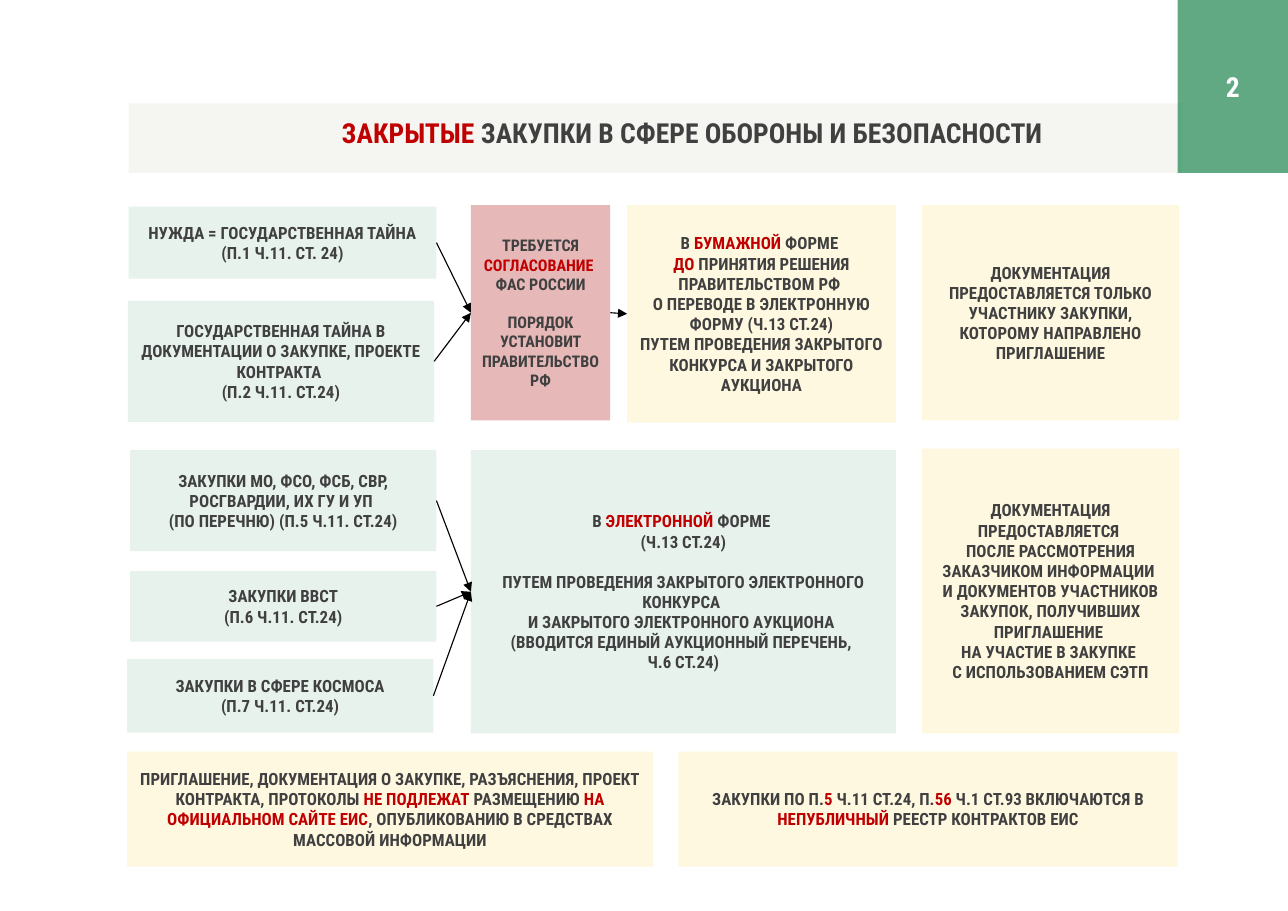
import dataclasses

import lxml.etree
import pptx
import pptx.dml.color
import pptx.enum.shapes
import pptx.enum.text
import pptx.oxml.ns
import pptx.util

Pt = pptx.util.Pt
RGB = pptx.dml.color.RGBColor.from_string
MIDDLE = pptx.enum.text.MSO_ANCHOR.MIDDLE
TOP = pptx.enum.text.MSO_ANCHOR.TOP
LEFT_SITE, RIGHT_SITE = 1, 3


@dataclasses.dataclass(frozen=True)
class Theme:
    font: str = "Roboto Condensed"
    text: str = "404040"
    accent: str = "C00000"
    white: str = "FFFFFF"
    line: str = "000000"
    band: str = "F5F6F1"
    badge: str = "077A3E"
    mint: str = "E7F2EC"
    cream: str = "FFF8E1"
    rose: str = "E6B9B8"
    heading: float = 18
    body: float = 11
    small: float = 10.5
    line_height: float = 1.17


class Deck:
    def __init__(self, theme, width, height):
        self.theme = theme
        self.prs = pptx.Presentation()
        self.prs.slide_width, self.prs.slide_height = Pt(width), Pt(height)
        self.s = None

    def add_slide(self):
        self.s = self.prs.slides.add_slide(self.prs.slide_layouts[5])

    def set_text(self, sp, paragraphs, size, color=None, anchor=MIDDLE, gap_before=None):
        tf = sp.text_frame
        frame = {
            "word_wrap": True,
            "vertical_anchor": anchor,
            "margin_left": Pt(7),
            "margin_right": Pt(7),
            "margin_top": Pt(3.6),
            "margin_bottom": Pt(3.6),
        }
        for name, value in frame.items():
            setattr(tf, name, value)
        for i, text in enumerate(paragraphs):
            p = tf.paragraphs[0] if i == 0 else tf.add_paragraph()
            gap = size * self.theme.line_height if i == gap_before else 0
            layout = {
                "alignment": pptx.enum.text.PP_ALIGN.CENTER,
                "space_before": Pt(gap),
            }
            for name, value in layout.items():
                setattr(p, name, value)
            self.add_runs(p, text, size, color or self.theme.text)

    def add_runs(self, p, text, size, color):
        font = {"name": self.theme.font, "size": Pt(size), "bold": True}
        for i, part in enumerate(text.split("*")):
            for j, line in enumerate(part.split("\n")):
                if j:
                    p.add_line_break()
                if not line:
                    continue
                r = p.add_run()
                r.text = line
                for name, value in font.items():
                    setattr(r.font, name, value)
                r.font.color.rgb = RGB(self.theme.accent if i % 2 else color)

    def title(self, text, box):
        sp = self.s.shapes.title
        for name, value in zip(("left", "top", "width", "height"), box):
            setattr(sp, name, Pt(value))
        self.set_text(sp, [text], self.theme.heading, anchor=TOP)
        sp.text_frame.auto_size = pptx.enum.text.MSO_AUTO_SIZE.SHAPE_TO_FIT_TEXT

    def rect(self, box, fill, alpha=None):
        kind = pptx.enum.shapes.MSO_SHAPE.RECTANGLE
        sp = self.s.shapes.add_shape(kind, *map(Pt, box))
        sp.shadow.inherit = False
        sp.fill.solid()
        sp.fill.fore_color.rgb = RGB(fill)
        sp.line.fill.background()
        if alpha:
            clr = sp.element.find(".//" + pptx.oxml.ns.qn("a:srgbClr"))
            lxml.etree.SubElement(
                clr, pptx.oxml.ns.qn("a:alpha"), val=str(alpha * 1000)
            )
        return sp

    def band(self, box):
        sp = self.rect(box, self.theme.band)
        self.s.shapes.title.element.addprevious(sp.element)

    def badge(self, text, box):
        sp = self.rect(box, self.theme.badge, alpha=64)
        self.set_text(sp, [text], self.theme.heading, self.theme.white)

    def card(self, box, fill, paragraphs, size=None, gap_before=None):
        sp = self.rect(box, fill)
        self.set_text(sp, paragraphs, size or self.theme.body, gap_before=gap_before)
        return sp

    def arrow(self, source, target):
        kind = pptx.enum.shapes.MSO_CONNECTOR.STRAIGHT
        c = self.s.shapes.add_connector(kind, 0, 0, 0, 0)
        c.begin_connect(source, RIGHT_SITE)
        c.end_connect(target, LEFT_SITE)
        c.line.width = Pt(0.75)
        c.line.color.rgb = RGB(self.theme.line)
        qn = pptx.oxml.ns.qn
        sp_pr = c.element.find(qn("p:spPr"))
        lxml.etree.SubElement(sp_pr.find(qn("a:ln")), qn("a:tailEnd"), type="triangle")
        lxml.etree.SubElement(sp_pr, qn("a:effectLst"))


def main():
    t = Theme()
    deck = Deck(t, 841, 595)
    deck.add_slide()
    deck.band((84, 67.5, 688, 45.5))
    deck.title(
        "*ЗАКРЫТЫЕ* ЗАКУПКИ В СФЕРЕ ОБОРОНЫ И БЕЗОПАСНОСТИ", (154, 72, 596, 29)
    )
    deck.badge("2", (769, 0, 72, 113))

    secret_cards = [
        ((84, 135, 201, 47), ["НУЖДА = ГОСУДАРСТВЕННАЯ ТАЙНА (П.1 Ч.11. СТ. 24)"]),
        (
            (83.5, 196.5, 200, 79),
            [
                "ГОСУДАРСТВЕННАЯ ТАЙНА В ДОКУМЕНТАЦИИ О ЗАКУПКЕ, "
                "ПРОЕКТЕ КОНТРАКТА \n(П.2 Ч.11. СТ.24)"
            ],
        ),
    ]
    sector_cards = [
        (
            (85, 294, 200, 66),
            [
                "ЗАКУПКИ МО, ФСО, ФСБ, СВР, РОСГВАРДИИ, ИХ ГУ И УП \n"
                "(ПО ПЕРЕЧНЮ) (П.5 Ч.11. СТ.24)"
            ],
        ),
        ((85, 373, 200, 46), ["ЗАКУПКИ ВВСТ", "(П.6 Ч.11. СТ.24)"]),
        ((83, 430.5, 200, 48), ["ЗАКУПКИ В СФЕРЕ КОСМОСА", "(П.7 Ч.11. СТ.24)"]),
    ]
    approval = deck.card(
        (307.5, 134, 91, 140.5),
        t.rose,
        ["ТРЕБУЕТСЯ *СОГЛАСОВАНИЕ *", "ФАС РОССИИ", "ПОРЯДОК УСТАНОВИТ ПРАВИТЕЛЬСТВО РФ"],
        size=t.small,
        gap_before=2,
    )
    electronic = deck.card(
        (307.5, 294, 277.5, 185),
        t.mint,
        [
            "В *ЭЛЕКТРОННОЙ* ФОРМЕ \n(Ч.13 СТ.24)",
            "ПУТЕМ ПРОВЕДЕНИЯ ЗАКРЫТОГО ЭЛЕКТРОННОГО КОНКУРСА \n"
            "И ЗАКРЫТОГО ЭЛЕКТРОННОГО АУКЦИОНА ",
            "(ВВОДИТСЯ ЕДИНЫЙ АУКЦИОННЫЙ ПЕРЕЧЕНЬ, ",
            "Ч.6 СТ.24)",
        ],
        gap_before=1,
    )
    paper = deck.card(
        (409.5, 134, 175.5, 142),
        t.cream,
        [
            "В *БУМАЖНОЙ* ФОРМЕ ",
            "*ДО* ПРИНЯТИЯ РЕШЕНИЯ ПРАВИТЕЛЬСТВОМ РФ \n"
            "О ПЕРЕВОДЕ В ЭЛЕКТРОННУЮ ФОРМУ (Ч.13 СТ.24)",
            "ПУТЕМ ПРОВЕДЕНИЯ ЗАКРЫТОГО КОНКУРСА И ЗАКРЫТОГО АУКЦИОНА",
        ],
    )
    for cards, target in ((secret_cards, approval), (sector_cards, electronic)):
        for box, paragraphs in cards:
            deck.arrow(deck.card(box, t.mint, paragraphs), target)
    deck.arrow(approval, paper)

    notes = [
        (
            (602, 134, 168, 140.5),
            "ДОКУМЕНТАЦИЯ ПРЕДОСТАВЛЯЕТСЯ ТОЛЬКО УЧАСТНИКУ ЗАКУПКИ, "
            "КОТОРОМУ НАПРАВЛЕНО ПРИГЛАШЕНИЕ",
        ),
        (
            (602, 293, 168, 186),
            "ДОКУМЕНТАЦИЯ ПРЕДОСТАВЛЯЕТСЯ \nПОСЛЕ РАССМОТРЕНИЯ ЗАКАЗЧИКОМ ИНФОРМАЦИИ \n"
            "И ДОКУМЕНТОВ УЧАСТНИКОВ ЗАКУПОК, ПОЛУЧИВШИХ ПРИГЛАШЕНИЕ \n"
            "НА УЧАСТИЕ В ЗАКУПКЕ \nС ИСПОЛЬЗОВАНИЕМ СЭТП",
        ),
        (
            (83, 491, 343.5, 75),
            "ПРИГЛАШЕНИЕ, ДОКУМЕНТАЦИЯ О ЗАКУПКЕ, РАЗЪЯСНЕНИЯ, ПРОЕКТ КОНТРАКТА, "
            "ПРОТОКОЛЫ *НЕ ПОДЛЕЖАТ* РАЗМЕЩЕНИЮ *НА ОФИЦИАЛЬНОМ САЙТЕ ЕИС*, "
            "ОПУБЛИКОВАНИЮ В СРЕДСТВАХ МАССОВОЙ ИНФОРМАЦИИ",
        ),
        (
            (443, 491, 326, 75),
            "ЗАКУПКИ ПО П.*5* Ч.11 СТ.24, П.*56* Ч.1 СТ.93 ВКЛЮЧАЮТСЯ В "
            "*НЕПУБЛИЧНЫЙ* РЕЕСТР КОНТРАКТОВ ЕИС",
        ),
    ]
    for box, text in notes:
        deck.card(box, t.cream, [text])
    deck.prs.save("out.pptx")


if __name__ == "__main__":
    main()
